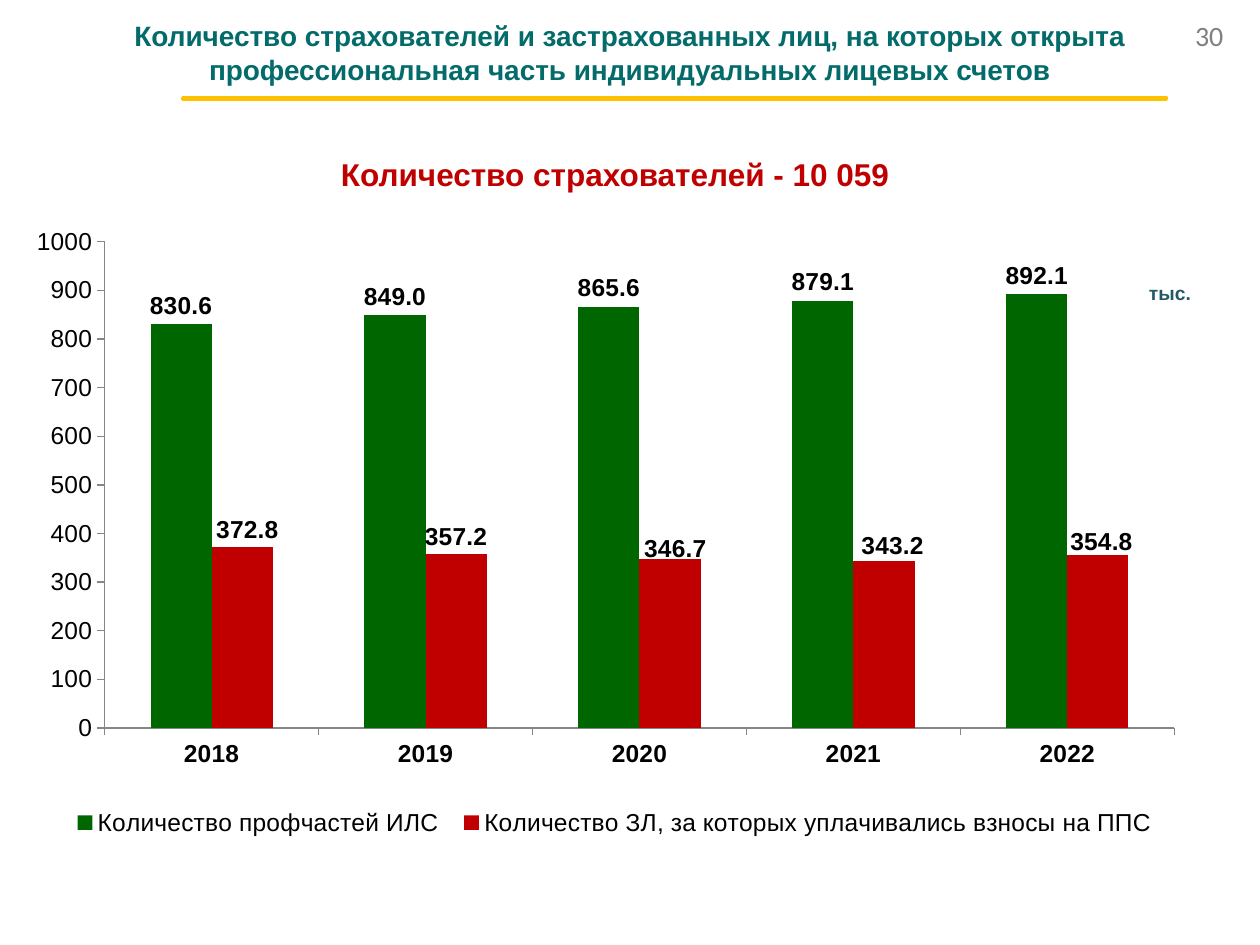
from dataclasses import dataclass

from lxml import etree
from pptx import Presentation
from pptx.chart.data import CategoryChartData
from pptx.dml.color import RGBColor
from pptx.enum.chart import XL_CHART_TYPE, XL_LABEL_POSITION, XL_LEGEND_POSITION, XL_TICK_MARK
from pptx.enum.shapes import MSO_SHAPE
from pptx.enum.text import PP_ALIGN
from pptx.oxml.ns import qn
from pptx.util import Pt

COLUMNS = XL_CHART_TYPE.COLUMN_CLUSTERED
OUTSIDE_END = XL_LABEL_POSITION.OUTSIDE_END
BOTTOM = XL_LEGEND_POSITION.BOTTOM
TICK_OUTSIDE = XL_TICK_MARK.OUTSIDE
MINUS = MSO_SHAPE.MATH_MINUS
CENTER, RIGHT = PP_ALIGN.CENTER, PP_ALIGN.RIGHT

CHART_WIDTH, CHART_HEIGHT = 720, 370
YEARS = ["2018", "2019", "2020", "2021", "2022"]
# Shift of each contributor label from its usual place, in points
LABEL_SHIFTS = [(3, 1), (0, 1), (3, 5), (5, 2), (2, 3)]


@dataclass
class Series:
    name: str
    values: list[float]
    color: str


SERIES = [
    Series("Количество профчастей ИЛС", [830.6, 849.0, 865.6, 879.1, 892.1], "006600"),
    Series("Количество ЗЛ, за которых уплачивались взносы на ППС",
           [372.8, 357.2, 346.7, 343.2, 354.8], "C00000"),
]


def rgb(value: str) -> RGBColor:
    return RGBColor.from_string(value)


def set_font(font, size: float, color: str = "000000", bold: bool = False,
             name: str = "Arial") -> None:
    font.size, font.bold, font.name = Pt(size), bold, name
    font.color.rgb = rgb(color)


def add_text(slide, text: str, left: float, top: float, width: float, height: float, *,
             size: float, color: str, bold: bool = True, name: str = "Arial",
             align=CENTER, wrap: bool = True) -> None:
    box = slide.shapes.add_textbox(Pt(left), Pt(top), Pt(width), Pt(height))
    tf = box.text_frame
    tf.word_wrap = wrap
    p = tf.paragraphs[0]
    p.alignment = align
    for i, line in enumerate(text.split("\n")):
        if i:
            p.add_line_break()
        r = p.add_run()
        r.text = line
        set_font(r.font, size, color, bold, name)


def make_layout(**settings):
    """Return a c:layout element whose manual settings keep the given order."""
    layout = etree.Element(qn("c:layout"))
    manual = etree.SubElement(layout, qn("c:manualLayout"))
    for tag, value in settings.items():
        etree.SubElement(manual, qn(f"c:{tag}")).set("val", str(value))
    return layout


def place_plot(chart) -> None:
    plot_area = chart.plots[0]._element.getparent()
    for old in plot_area.findall(qn("c:layout")):
        plot_area.remove(old)
    plot_area.insert(0, make_layout(
        layoutTarget="inner", xMode="edge", yMode="edge",
        x=0.085, y=0.033, w=0.849, h=0.751))


def add_legend(chart) -> None:
    chart.has_legend = True
    legend = chart.legend
    legend.position = BOTTOM
    legend.include_in_layout = False
    set_font(legend.font, 14)
    element = legend._element
    for old in element.findall(qn("c:layout")):
        element.remove(old)
    element.find(qn("c:legendPos")).addnext(make_layout(
        xMode="edge", yMode="edge", x=0.05, y=0.89, w=0.88, h=0.08))


def format_axes(chart) -> None:
    value_axis = chart.value_axis
    value_axis.minimum_scale, value_axis.maximum_scale = 0, 1000
    value_axis.major_unit = 100
    value_axis.has_major_gridlines = False
    value_axis.tick_labels.number_format = "0"
    value_axis.tick_labels.number_format_is_linked = False
    for axis, bold in ((value_axis, False), (chart.category_axis, True)):
        axis.major_tick_mark = TICK_OUTSIDE
        axis.format.line.color.rgb = rgb("868686")
        set_font(axis.tick_labels.font, 14, bold=bold)


def shift_labels(series) -> None:
    for i, (dx, dy) in enumerate(LABEL_SHIFTS):
        label = series.points[i].data_label
        set_font(label.font, 14, bold=True)
        label.position = OUTSIDE_END
        element = series._element.find(qn("c:dLbls")).findall(qn("c:dLbl"))[i]
        element.find(qn("c:idx")).addnext(make_layout(
            x=round(dx / CHART_WIDTH, 4), y=round(dy / CHART_HEIGHT, 4)))


def add_column_chart(slide) -> None:
    data = CategoryChartData(number_format="0.0")
    data.categories = YEARS
    for item in SERIES:
        data.add_series(item.name, item.values)
    chart = slide.shapes.add_chart(
        COLUMNS, Pt(-1.4), Pt(126), Pt(CHART_WIDTH), Pt(CHART_HEIGHT), data).chart
    chart.has_title = False
    set_font(chart.font, 18)
    plot = chart.plots[0]
    plot.gap_width, plot.overlap, plot.vary_by_categories = 150, 0, False
    for series, item in zip(plot.series, SERIES):
        series.format.fill.solid()
        series.format.fill.fore_color.rgb = rgb(item.color)
        labels = series.data_labels
        labels.show_value = True
        labels.number_format, labels.number_format_is_linked = "0.0", False
        labels.position = OUTSIDE_END
        set_font(labels.font, 14, bold=True)
    shift_labels(plot.series[1])
    format_axes(chart)
    add_legend(chart)
    place_plot(chart)


def add_title_rule(slide) -> None:
    sp = slide.shapes.add_shape(MINUS, Pt(3), Pt(54.5), Pt(765), Pt(3.6))
    sp.shadow.inherit = False
    sp.fill.solid()
    sp.fill.fore_color.rgb = rgb("4F81BD")
    sp.line.color.rgb = rgb("FFC000")
    sp.line.width = Pt(2)


def main() -> None:
    prs = Presentation()
    prs.slide_width, prs.slide_height = Pt(720), Pt(540)
    slide = prs.slides.add_slide(prs.slide_layouts[6])
    add_column_chart(slide)
    add_text(slide, "Количество страхователей и застрахованных лиц, на которых открыта\n"
             "профессиональная часть индивидуальных лицевых счетов",
             0, 7.2, 720, 46, size=16, color="036B6A")
    add_text(slide, "тыс.", 648.7, 157, 39, 21, size=11, color="215968",
             align=RIGHT, wrap=False)
    add_text(slide, "30", 667.5, 7.2, 47, 26.6, size=16, color="808080",
             bold=False, name="Calibri")
    add_title_rule(slide)
    add_text(slide, "Количество страхователей - 10 059", 88, 85, 527, 29,
             size=18, color="C00000")
    prs.save("out.pptx")


if __name__ == "__main__":
    main()
